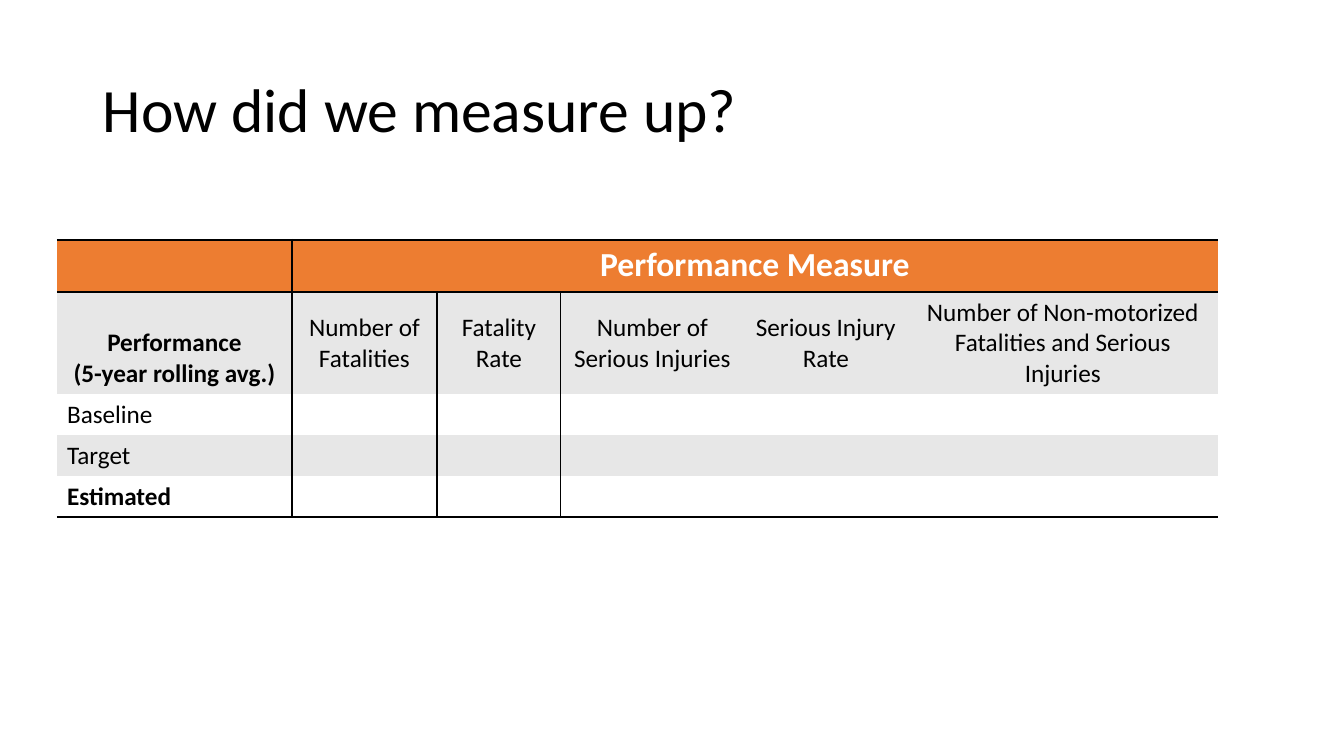
import dataclasses

import lxml.etree
import pptx
import pptx.dml.color
import pptx.enum.text
import pptx.oxml.ns
import pptx.util

ALIGN = pptx.enum.text.PP_ALIGN
ANCHOR = pptx.enum.text.MSO_ANCHOR


@dataclasses.dataclass(frozen=True)
class Theme:
    font: str = "Calibri"
    ink: str = "000000"
    paper: str = "FFFFFF"
    accent: str = "ED7D31"
    band: str = "E7E7E7"
    title_size: int = 44
    heading_size: int = 24
    body_size: int = 18
    thin_rule: int = 1
    thick_rule: int = 2
    table_style: str = "{2D5ABB26-0587-4C30-8999-92F81FD0307C}"


def px(length):
    return pptx.util.Emu(round(length * 914400 / 100.8))


class SlideBuilder:
    def __init__(self, deck, theme):
        self.theme = theme
        self.page = deck.slides.add_slide(deck.slide_layouts[6])

    def style_text(self, frame, size, color, bold=False, align=ALIGN.LEFT):
        for para in frame.paragraphs:
            para.alignment = align
            for span in para.runs:
                span.font.name = self.theme.font
                span.font.size = pptx.util.Pt(size)
                span.font.bold = bold
                span.font.color.rgb = pptx.dml.color.RGBColor.from_string(color)

    def title(self, text, left, top, width, height):
        box = self.page.shapes.add_textbox(px(left), px(top), px(width), px(height))
        frame = box.text_frame
        frame.word_wrap = True
        frame.vertical_anchor = ANCHOR.MIDDLE
        frame.text = text
        frame.paragraphs[0].line_spacing = 0.9
        self.style_text(frame, self.theme.title_size, self.theme.ink)

    def table(self, left, top, widths, heights):
        frame = self.page.shapes.add_table(
            len(heights), len(widths), px(left), px(top), px(sum(widths)), px(sum(heights))
        )
        table = frame.table
        table.first_row = False
        table.horz_banding = False
        style = table._tbl.tblPr.find(pptx.oxml.ns.qn("a:tableStyleId"))
        style.text = self.theme.table_style
        for column, width in zip(table.columns, widths):
            column.width = px(width)
        for row, height in zip(table.rows, heights):
            row.height = px(height)
        return table

    def cell(self, cell, fill, borders):
        properties = cell._tc.get_or_add_tcPr()
        for side in "LRTB":
            if side in borders:
                self.border(properties, side, borders[side])
        cell.fill.solid()
        cell.fill.fore_color.rgb = pptx.dml.color.RGBColor.from_string(fill)

    def border(self, properties, side, weight):
        qn = pptx.oxml.ns.qn
        line = lxml.etree.SubElement(properties, qn(f"a:ln{side}"), w=str(pptx.util.Pt(weight)))
        solid = lxml.etree.SubElement(line, qn("a:solidFill"))
        lxml.etree.SubElement(solid, qn("a:srgbClr"), val=self.theme.ink)

    def cell_text(self, cell, text, size, color, bold=False, align=ALIGN.LEFT, anchor=ANCHOR.TOP):
        cell.text_frame.text = text
        cell.vertical_anchor = anchor
        self.style_text(cell.text_frame, size, color, bold, align)


def measure_table(builder):
    theme = builder.theme
    widths = [235, 145, 124, 183, 164, 310]
    heights = [52, 102, 41, 41, 41]
    table = builder.table(57, 240, widths, heights)
    last_row = len(heights) - 1
    fills = [theme.accent, theme.band, theme.paper, theme.band, theme.paper]

    for row, fill in enumerate(fills):
        for column in range(len(widths)):
            borders = {}
            if column == 0 or (column == 1 and row > 0):
                borders["R"] = theme.thin_rule
            if column == 1 or (column == 2 and row > 0):
                borders["L"] = theme.thin_rule
            if row == 0:
                borders["T"] = theme.thick_rule
            if row in (0, last_row):
                borders["B"] = theme.thick_rule
            builder.cell(table.cell(row, column), fill, borders)

    heading = table.cell(0, 1)
    heading.merge(table.cell(0, len(widths) - 1))
    builder.cell_text(
        heading, "Performance Measure", theme.heading_size, theme.paper, True, ALIGN.CENTER
    )

    builder.cell_text(
        table.cell(1, 0), "Performance\n(5-year rolling avg.)",
        theme.body_size, theme.ink, True, ALIGN.CENTER, ANCHOR.BOTTOM,
    )
    measures = [
        "Number of Fatalities",
        "Fatality Rate",
        "Number of Serious Injuries",
        "Serious Injury Rate",
        "Number of Non-motorized Fatalities and Serious Injuries",
    ]
    for column, measure in enumerate(measures, start=1):
        builder.cell_text(
            table.cell(1, column), measure,
            theme.body_size, theme.ink, False, ALIGN.CENTER, ANCHOR.MIDDLE,
        )
    for row, label in enumerate(["Baseline", "Target", "Estimated"], start=2):
        builder.cell_text(
            table.cell(row, 0), label, theme.body_size, theme.ink, row == last_row
        )


def main():
    deck = pptx.Presentation()
    deck.slide_width = px(1344)
    deck.slide_height = px(756)
    builder = SlideBuilder(deck, Theme())
    builder.title("How did we measure up?", 93, 40, 1159, 146)
    measure_table(builder)
    deck.save("out.pptx")


if __name__ == "__main__":
    main()
